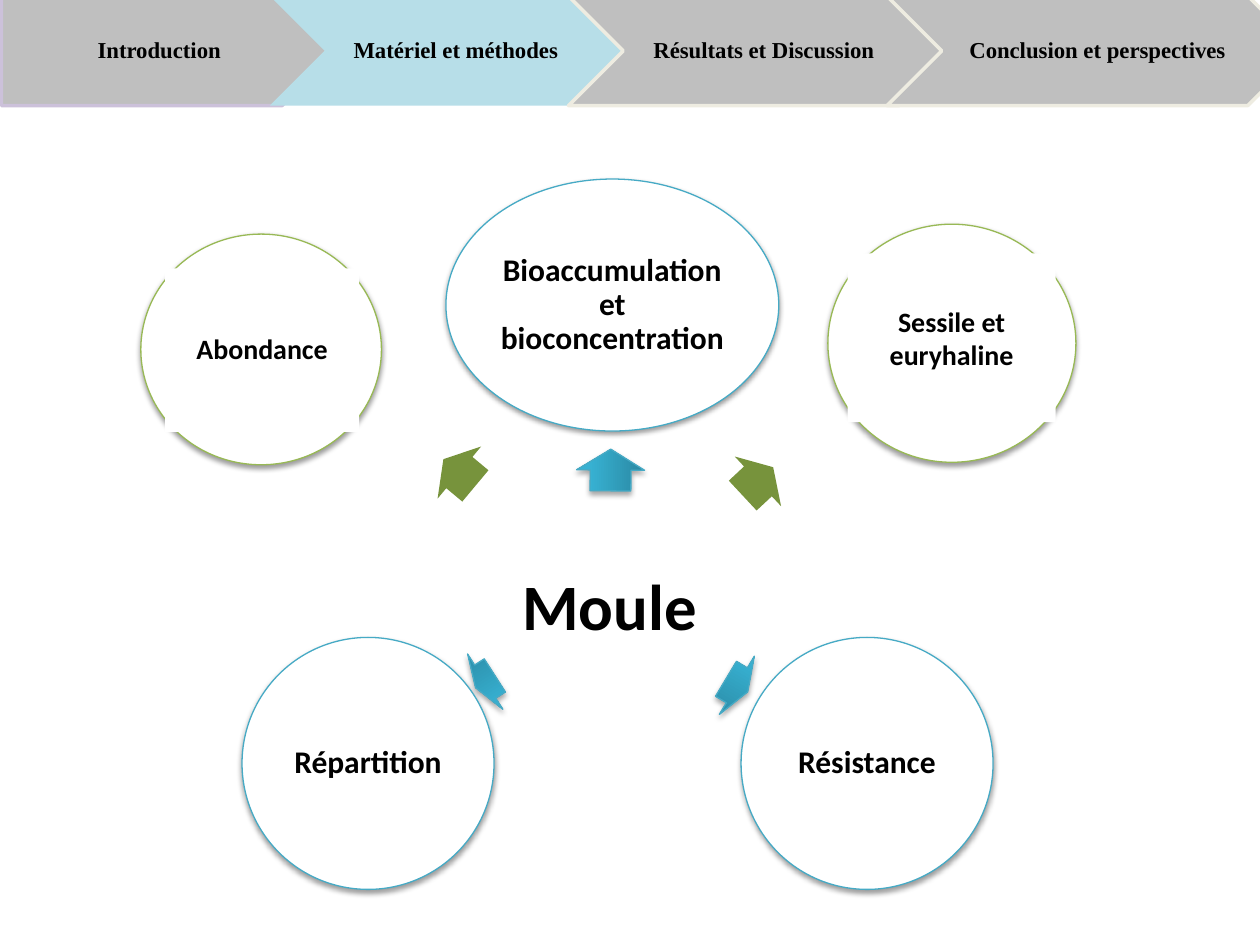
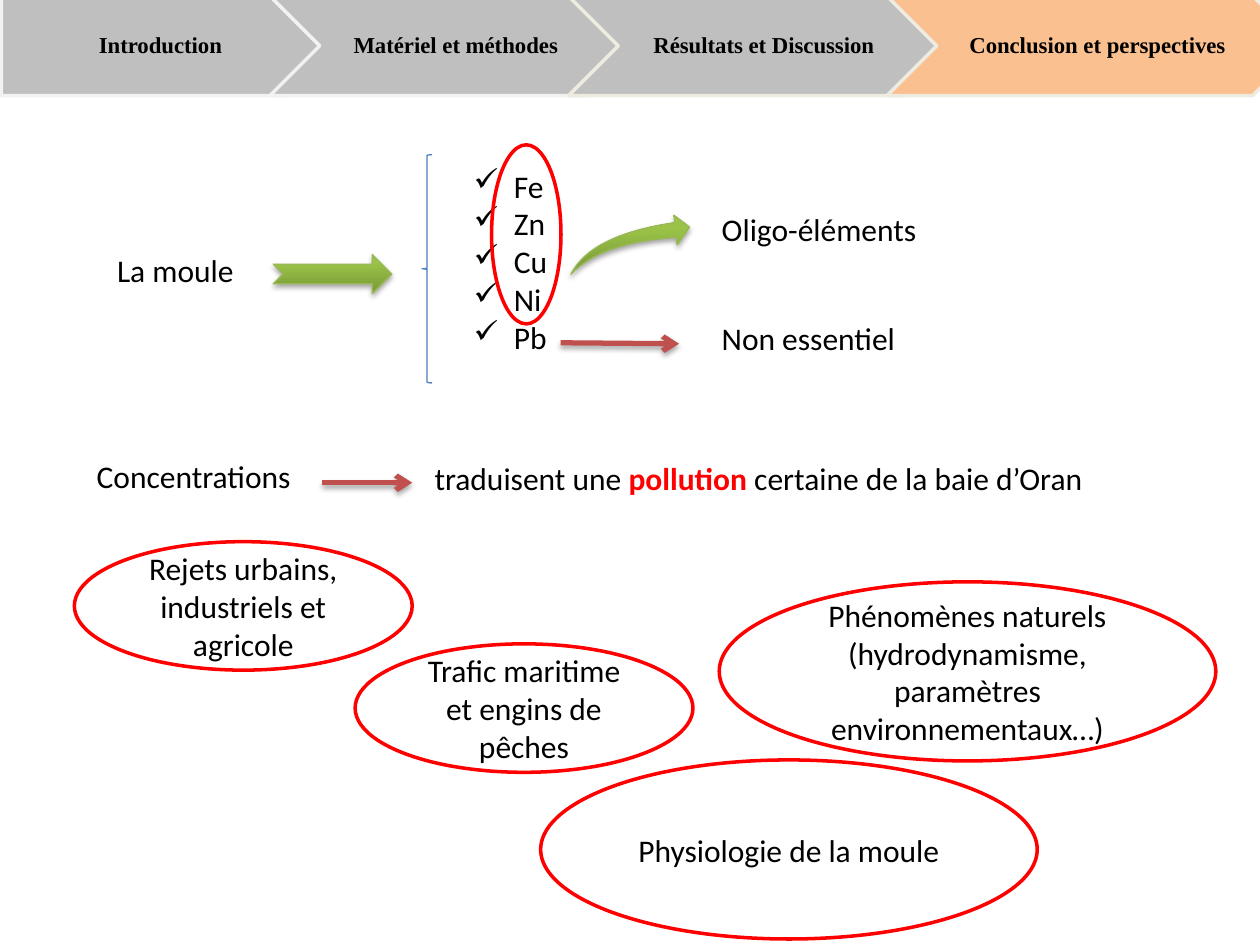
import pptx
import pptx.util
import pptx.dml.color
import pptx.enum.shapes
import pptx.enum.text
import pptx.oxml
import pptx.oxml.ns
import lxml.etree

Cm = pptx.util.Cm
Pt = pptx.util.Pt
Shape = pptx.enum.shapes.MSO_SHAPE
Align = pptx.enum.text.PP_ALIGN
Anchor = pptx.enum.text.MSO_ANCHOR
qn = pptx.oxml.ns.qn

HUE = {
    "black": "000000", "white": "FFFFFF", "grey": "BFBFBF", "sky": "B7DEE8",
    "peach": "FAC090", "lilac": "CCC1DA", "cream": "EEECE1", "pale": "F2F2F2",
    "teal": "46AAC5", "deep": "2A88A2", "aqua": "37B1D2",
    "lime": "98B955", "moss": "779737", "leaf": "9BC348", "olive": "77933C",
    "red": "FF0000", "brick": "C0504D", "blue": "4B7EBC",
}
STEPS = [
    ("Introduction", 0.03, 6.76),
    ("Matériel et méthodes", 5.44, 7.39),
    ("Résultats et Discussion", 11.46, 7.77),
    ("Conclusion et perspectives", 17.88, 8.38),
]
THIN = (0.08, 0.08, 0.08, 0.08)
WIDE = (0.25, 0.13, 0.25, 0.13)


def tint(name):
    return pptx.dml.color.RGBColor.from_string(HUE[name])


def node(home, tag, **attrs):
    item = lxml.etree.SubElement(home, qn(tag))
    for key, value in attrs.items():
        item.set(key, str(value))
    return item


def write(shape, text, size=18, font="Calibri", bold=False, align=Align.CENTER,
          anchor=Anchor.MIDDLE, pads=WIDE, lead=None, hot=None, tick=False):
    frame = shape.text_frame
    frame.word_wrap = True
    frame.vertical_anchor = anchor
    (frame.margin_left, frame.margin_top,
     frame.margin_right, frame.margin_bottom) = [Cm(pad) for pad in pads]
    for i, line in enumerate(text.split("\n")):
        para = frame.add_paragraph() if i else frame.paragraphs[0]
        para.alignment = align
        if lead:
            para.line_spacing = lead
        for part in line.partition(hot) if hot else [line]:
            run = para.add_run()
            run.text = part
            run.font.name = font
            run.font.size = Pt(size)
            run.font.bold = bold or part == hot
            run.font.color.rgb = tint("red" if part == hot else "black")
        if tick:
            props = para._p.get_or_add_pPr()
            props.set("marL", str(Cm(0.81)))
            props.set("indent", str(-Cm(0.81)))
            node(props, "a:buChar", char="✓")


def shade(props, drop, alpha):
    effect = props.find(qn("a:effectLst"))
    if effect is None:
        effect = node(props, "a:effectLst")
    cast = node(effect, "a:outerShdw", blurRad=Pt(3.1), dist=Pt(drop),
                dir=5400000, rotWithShape=0)
    node(node(cast, "a:srgbClr", val=HUE["black"]), "a:alpha", val=alpha * 1000)


def draw(slide, kind, at, fill=None, line=None, width=0.75, turn=0, adjust=(), drop=0, alpha=35):
    shape = slide.shapes.add_shape(kind, *[Cm(n) for n in at])
    shape.shadow.inherit = False
    shape.rotation = turn
    for i, value in enumerate(adjust):
        shape.adjustments[i] = value
    if isinstance(fill, tuple):
        shape.fill.gradient()
        shape.fill.gradient_angle = 90
        for stop, name, place in zip(shape.fill.gradient_stops, fill, (0, 0.8)):
            stop.color.rgb = tint(name)
            stop.position = place
    elif fill:
        shape.fill.solid()
        shape.fill.fore_color.rgb = tint(fill)
    else:
        shape.fill.background()
    if line:
        shape.line.color.rgb = tint(line)
        shape.line.width = Pt(width)
    else:
        shape.line.fill.background()
    if drop:
        shade(shape._element.spPr, drop, alpha)
    return shape


def label(slide, text, at, **form):
    box = slide.shapes.add_textbox(*[Cm(n) for n in at])
    write(box, text, **form)


def note(slide, text, left, top, width, **form):
    label(slide, text, (left, top, width, 1.02), align=Align.LEFT, anchor=Anchor.TOP, **form)


def band(slide, high, fills, lines):
    for i, (text, left, width) in enumerate(STEPS):
        kind = Shape.CHEVRON if i else Shape.PENTAGON
        step = draw(slide, kind, (left, -0.08, width, high), fills[i], lines[i], 2)
        write(step, text, size=13, font="Times New Roman", bold=True, lead=0.9,
              pads=(0.15 if i else 0.2, 0.1, 0.05, 0.1))


def bubble(slide, at, line):
    return draw(slide, Shape.OVAL, at, "white", line, drop=1.6, alpha=38)


def patch(slide, text, oval, rect, lead):
    bubble(slide, oval, "lime")
    write(draw(slide, Shape.RECTANGLE, rect, "white"), text, size=16, bold=True,
          pads=THIN, lead=lead)


def cause(slide, text, at):
    write(draw(slide, Shape.OVAL, at, "white", "red", 2), text)


def link(slide, *ends):
    line = slide.shapes.add_connector(
        pptx.enum.shapes.MSO_CONNECTOR.STRAIGHT, *[Cm(n) for n in ends])
    line.line.color.rgb = tint("brick")
    line.line.width = Pt(3)
    node(line.line._get_or_add_ln(), "a:tailEnd", type="arrow")
    shade(line._element.spPr, 1.8, 35)


def mussel(slide):
    band(slide, 2.21, ["grey", "sky", "grey", "grey"], ["lilac", None, "cream", "cream"])
    label(slide, "Moule", (10.31, 10.85, 3.96, 2.87), size=37, bold=True, lead=0.9,
          pads=(0.13,) * 4)
    for at, turn in [((11.89, 8.79, 0.84, 1.37), 270.4),
                     ((14.6, 13.13, 0.51, 1.37), 31),
                     ((9.55, 13.08, 0.46, 1.32), 147.5)]:
        draw(slide, Shape.RIGHT_ARROW, at, ("deep", "aqua"), "teal", turn=turn,
             adjust=(0.6, 0.5), drop=1.8)
    for text, at in [("Bioaccumulation et bioconcentration", (8.99, 3.61, 6.71, 5.08)),
                     ("Résistance", (14.94, 12.85, 5.08, 5.08)),
                     ("Répartition", (4.88, 12.85, 5.08, 5.08))]:
        write(bubble(slide, at, "teal"), text, bold=True, pads=THIN, lead=0.9)
    patch(slide, "Abondance", (2.84, 4.72, 4.85, 4.65), (3.33, 5.41, 3.91, 3.3), 0.9)
    patch(slide, "Sessile et euryhaline", (16.69, 4.52, 5, 4.8), (17.09, 5.11, 4.19, 3.4), 1.0)
    for left, top, turn in [(8.84, 8.84, 219.9), (14.86, 9.02, 317)]:
        draw(slide, Shape.RIGHT_ARROW, (left, top, 0.84, 1.37), "olive", turn=turn,
             adjust=(0.6, 0.5))


def closing(slide):
    note(slide, "La moule", 2.11, 4.93, 4.8)
    draw(slide, Shape.LEFT_BRACE, (8.51, 3.12, 0.2, 4.6), line="blue")
    label(slide, "Fe\nZn\nCu\nNi\nPb", (9.3, 3.23, 3, 4.11), align=Align.LEFT,
          anchor=Anchor.TOP, tick=True)
    green = {"fill": ("moss", "leaf"), "line": "lime", "drop": 1.8}
    draw(slide, Shape.NOTCHED_RIGHT_ARROW, (5.51, 5.13, 2.39, 0.79), **green)
    draw(slide, Shape.SWOOSH_ARROW, (11.51, 4.34, 2.39, 1.19), adjust=(0.25, 0.25), **green)
    draw(slide, Shape.OVAL, (9.91, 2.92, 1.4, 3.61), line="red", width=2)
    note(slide, "Oligo-éléments", 14.3, 4.11, 6.81)
    link(slide, 11.3, 6.91, 13.69, 6.93)
    note(slide, "Non essentiel", 14.3, 6.3, 5.41)
    note(slide, "traduisent une pollution certaine de la baie d’Oran", 8.51, 9.12, 15.19,
         hot="pollution")
    note(slide, "Concentrations", 1.7, 9.09, 5.21)
    link(slide, 6.5, 9.73, 8.31, 9.73)
    cause(slide, "Rejets urbains, industriels et agricole", (1.5, 10.92, 6.81, 2.59))
    cause(slide, "Trafic maritime et engins de pêches", (7.16, 12.98, 6.81, 2.59))
    cause(slide, "Phénomènes naturels (hydrodynamisme, paramètres environnementaux…)",
          (14.5, 11.73, 10.01, 3.61))
    band(slide, 2.01, ["grey", "grey", "grey", "peach"], ["pale", "pale", "cream", "cream"])
    cause(slide, "Physiologie de la moule", (10.9, 15.32, 10.01, 3.61))


def main():
    deck = pptx.Presentation()
    deck.slide_width = Cm(25.4)
    deck.slide_height = Cm(19.05)
    for build in (mussel, closing):
        build(deck.slides.add_slide(deck.slide_layouts[6]))
    deck.save("out.pptx")


if __name__ == "__main__":
    main()
